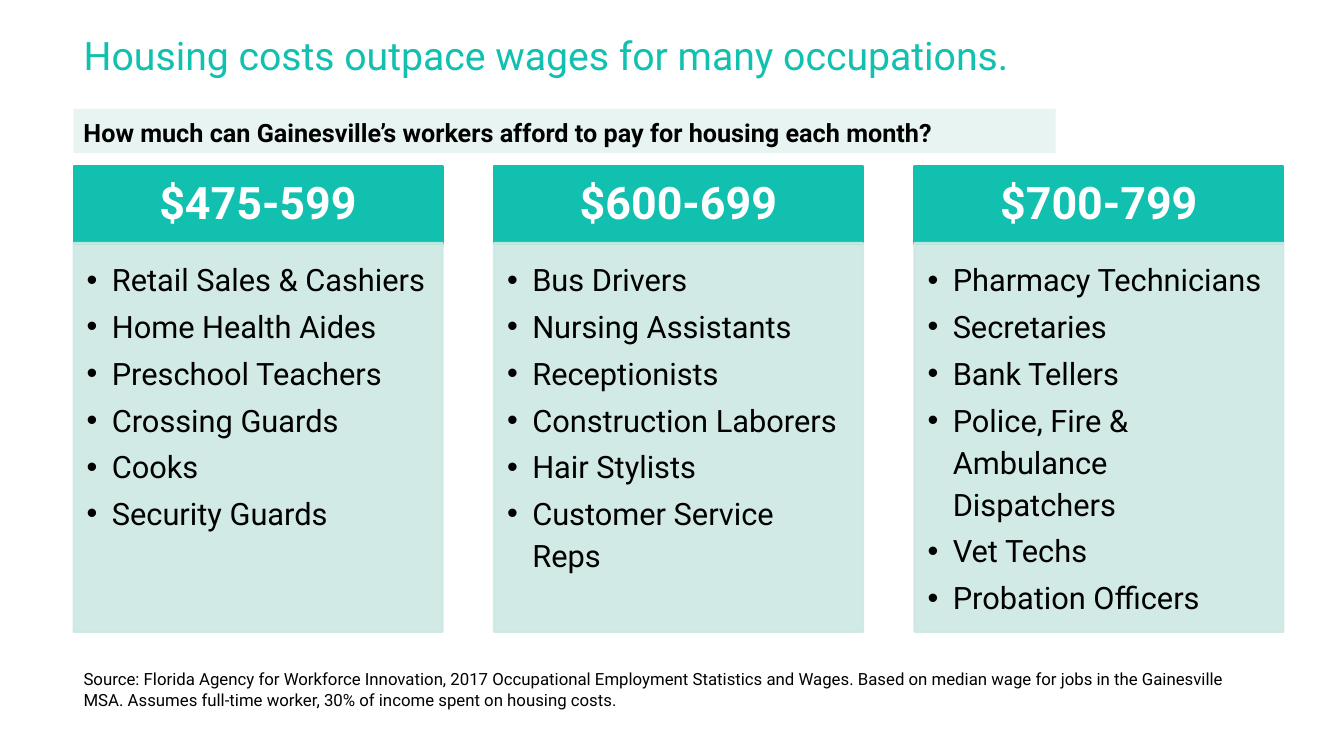
from pptx import Presentation
from pptx.dml.color import RGBColor
from pptx.enum.shapes import MSO_SHAPE as Shape
from pptx.enum.text import MSO_ANCHOR as Anchor, MSO_AUTO_SIZE as AutoSize, PP_ALIGN as Align
from pptx.oxml.ns import qn
from pptx.util import Inches, Pt
from lxml.etree import SubElement

TEAL, MINT, PALE = "12C0B0", "CCE8E4", "E7F4F2"
BLACK, WHITE = "000000", "FFFFFF"
LEFT = 0.73
COLUMN_WIDTH, COLUMN_STEP = 3.66, 4.17
COLUMNS = [
    ("$475-599", ["Retail Sales & Cashiers", "Home Health Aides", "Preschool Teachers",
                  "Crossing Guards", "Cooks", "Security Guards"]),
    ("$600-699", ["Bus Drivers", "Nursing Assistants", "Receptionists",
                  "Construction Laborers", "Hair Stylists", "Customer Service Reps"]),
    ("$700-799", ["Pharmacy Technicians", "Secretaries", "Bank Tellers",
                  "Police, Fire & Ambulance Dispatchers", "Vet Techs", "Probation Officers"]),
]


def write(box, lines, size, color, bold=False, align=Align.LEFT, anchor=Anchor.TOP,
          spacing=1.0, after=0, insets=(0.1, 0.05, 0.1, 0.05)):
    """Fill a box with one paragraph per line and return the paragraphs."""
    frame = box.text_frame
    frame.word_wrap = True
    frame.auto_size = AutoSize.NONE
    frame.vertical_anchor = anchor
    (frame.margin_left, frame.margin_top,
     frame.margin_right, frame.margin_bottom) = map(Inches, insets)
    paras = [frame.paragraphs[0]] + [frame.add_paragraph() for _ in lines[1:]]
    for para, line in zip(paras, lines):
        para.alignment = align
        para.line_spacing = spacing
        para.space_after = Pt(after)
        span = para.add_run()
        span.text = line
        span.font.name = "Roboto"
        span.font.size = Pt(size)
        span.font.bold = bold
        span.font.color.rgb = RGBColor.from_string(color)
    return paras


def add_panel(left, top, width, height, color, outlined=True, opacity=100):
    panel = slide.shapes.add_shape(Shape.RECTANGLE, *map(Inches, (left, top, width, height)))
    panel.shadow.inherit = False
    fills = [panel.fill]
    if outlined:
        panel.line.width = Pt(1.5)
        fills.append(panel.line.fill)
    else:
        panel.line.fill.background()
    for fill in fills:
        fill.solid()
        fill.fore_color.rgb = RGBColor.from_string(color)
    if opacity < 100:
        for tint in panel._element.spPr.iter(qn("a:srgbClr")):
            SubElement(tint, qn("a:alpha"), val=str(opacity * 1000))
    return panel


deck = Presentation()
deck.slide_width, deck.slide_height = Inches(13.33), Inches(7.5)
slide = deck.slides.add_slide(deck.slide_layouts[5])

title = slide.shapes.title
title.left, title.top, title.width, title.height = map(Inches, (LEFT, 0.26, 11.59, 0.73))
write(title, ["Housing costs outpace wages for many occupations."], 28, TEAL)

question = add_panel(LEFT, 1.08, 9.74, 0.44, PALE, outlined=False)
write(question, ["How much can Gainesville’s workers afford to pay for housing each month?"],
      18, BLACK, bold=True, spacing=1.12)

for index, (rent_range, occupations) in enumerate(COLUMNS):
    left = LEFT + index * COLUMN_STEP
    header = add_panel(left, 1.65, COLUMN_WIDTH, 0.77, TEAL)
    write(header, [rent_range], 32, WHITE, bold=True, align=Align.CENTER,
          anchor=Anchor.MIDDLE, spacing=0.9, insets=(0.25, 0.14, 0.25, 0.14))
    body = add_panel(left, 2.41, COLUMN_WIDTH, 3.86, MINT, opacity=90)
    paras = write(body, occupations, 22, BLACK, spacing=1.14, after=3.3,
                  insets=(0.13, 0.13, 0.17, 0.19))
    for para in paras:
        properties = para._p.get_or_add_pPr()
        properties.set("marL", str(Inches(0.25)))
        properties.set("indent", str(Inches(-0.25)))
        SubElement(properties, qn("a:buFont"), typeface="Arial")
        SubElement(properties, qn("a:buChar"), char="•")

source = slide.shapes.add_textbox(*map(Inches, (LEFT, 6.59, 11.59, 0.5)))
write(source, ["Source: Florida Agency for Workforce Innovation, 2017 Occupational Employment "
               "Statistics and Wages. Based on median wage for jobs in the Gainesville MSA. "
               "Assumes full-time worker, 30% of income spent on housing costs."], 12, BLACK)

deck.save("out.pptx")
